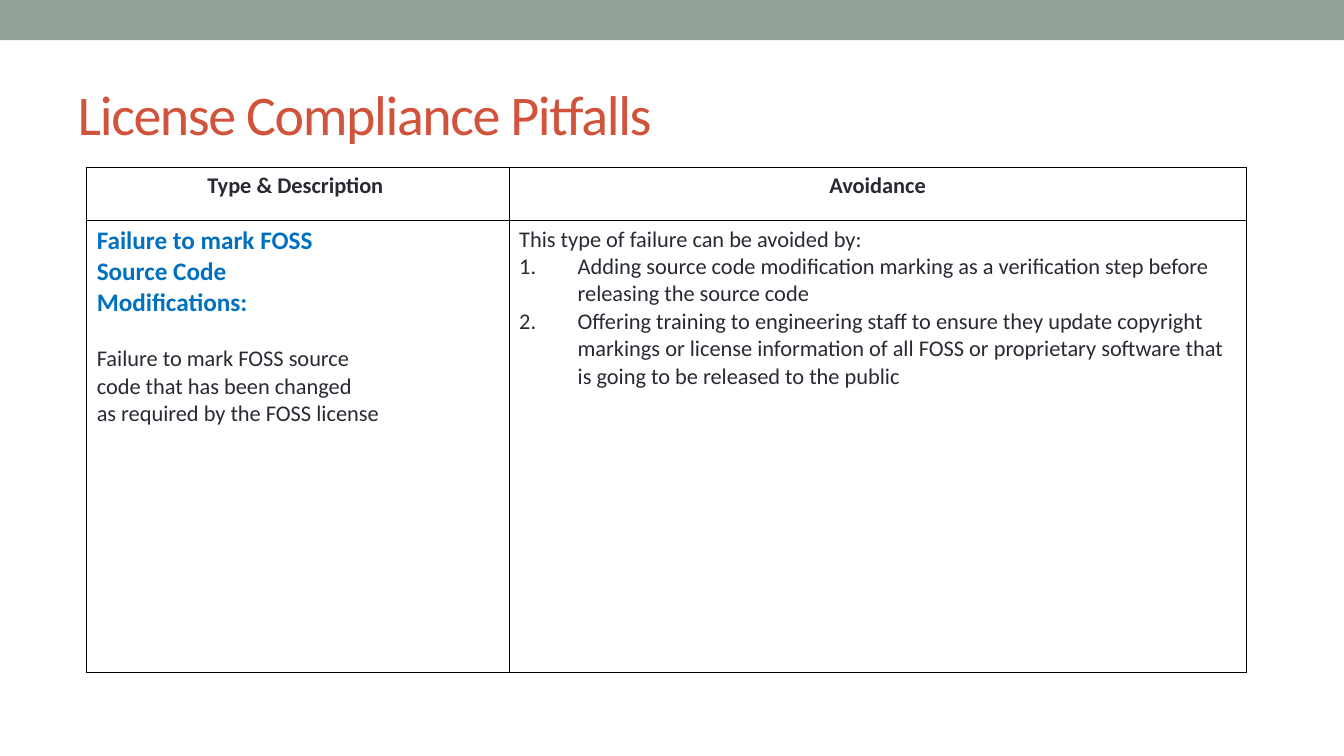
from lxml import etree
from pptx import Presentation, util as u
from pptx.dml.color import RGBColor
from pptx.enum import shapes, text
from pptx.oxml.ns import qn

theme = dict(
    font="Calibri", band="93A299", title="D2533C", ink="292934",
    accent="0070C0", rule="000000", big=40, head=18, body=16,
)

deck = Presentation()
deck.slide_width, deck.slide_height = u.Inches(13.33), u.Inches(7.5)
slide = deck.slides.add_slide(deck.slide_layouts[5])


def add_run(para, words, size, color, bold=False):
    run = para.add_run()
    run.text = words
    run.font.name = theme["font"]
    run.font.size = u.Pt(theme[size])
    run.font.bold = bold
    run.font.color.rgb = RGBColor.from_string(theme[color])
    return run


# Top band
band = slide.shapes.add_shape(
    shapes.MSO_SHAPE.RECTANGLE, 0, 0, deck.slide_width, u.Inches(0.4))
band.shadow.inherit = False
band.fill.solid()
band.fill.fore_color.rgb = RGBColor.from_string(theme["band"])
band.line.fill.background()

# Title
title = slide.shapes.title
title.left, title.top = u.Inches(0.67), u.Inches(0.58)
title.width, title.height = u.Inches(12), u.Inches(1.08)
title.text_frame.vertical_anchor = text.MSO_ANCHOR.MIDDLE
para = title.text_frame.paragraphs[0]
para.alignment = text.PP_ALIGN.LEFT
run = add_run(para, "License Compliance Pitfalls", "big", "title")
run.font._element.set("spc", "-100")

# Table content: (words, size, color, bold, centred, numbered, gap before)
mark = ["Failure to mark FOSS", "Source Code", "Modifications:"]
about = ["Failure to mark FOSS source", "code that has been changed",
         "as required by the FOSS license"]
steps = [
    "Adding source code modification marking as a verification step before "
    "releasing the source code",
    "Offering training to engineering staff to ensure they update copyright "
    "markings or license information of all FOSS or proprietary software "
    "that is going to be released to the public",
]
rows = [
    [[(words, "body", "ink", True, True, False, 0)]
     for words in ("Type & Description ", "Avoidance")],
    [
        [(words, "head", "accent", True, False, False, 0) for words in mark]
        + [(words, "body", "ink", False, False, False, 0 if i else 19.5)
           for i, words in enumerate(about)],
        [("This type of failure can be avoided by:",
          "body", "ink", False, False, False, 0)]
        + [(words, "body", "ink", False, False, True, 0) for words in steps],
    ],
]

# Table grid
wide, tall = (4.19, 7.31), (0.53, 4.48)
table = slide.shapes.add_table(
    2, 2, u.Inches(0.86), u.Inches(1.66),
    u.Inches(sum(wide)), u.Inches(sum(tall))).table
table.first_row = table.horz_banding = False
for col, size in zip(table.columns, wide):
    col.width = u.Inches(size)
for row, size in zip(table.rows, tall):
    row.height = u.Inches(size)

# Cells
for r, row in enumerate(rows):
    for c, lines in enumerate(row):
        cell = table.cell(r, c)
        cell.margin_left = cell.margin_right = u.Inches(0.1)
        cell.margin_top = cell.margin_bottom = u.Inches(0.05)
        props = cell._tc.get_or_add_tcPr()
        for side in "LRTB":
            edge = etree.SubElement(props, qn("a:ln" + side), w="12700")
            paint = etree.SubElement(edge, qn("a:solidFill"))
            etree.SubElement(paint, qn("a:srgbClr"), val=theme["rule"])
        cell.fill.background()

        frame = cell.text_frame
        for i, (words, size, color, bold, mid, step, gap) in enumerate(lines):
            para = frame.add_paragraph() if i else frame.paragraphs[0]
            para.alignment = (
                text.PP_ALIGN.CENTER if mid else text.PP_ALIGN.LEFT)
            para.space_before = u.Pt(gap)
            if step:
                form = para._p.get_or_add_pPr()
                form.set("marL", str(u.Inches(0.58)))
                form.set("indent", str(-u.Inches(0.58)))
                etree.SubElement(
                    form, qn("a:buAutoNum"), type="arabicPeriod")
            add_run(para, words, size, color, bold)

deck.save("out.pptx")
